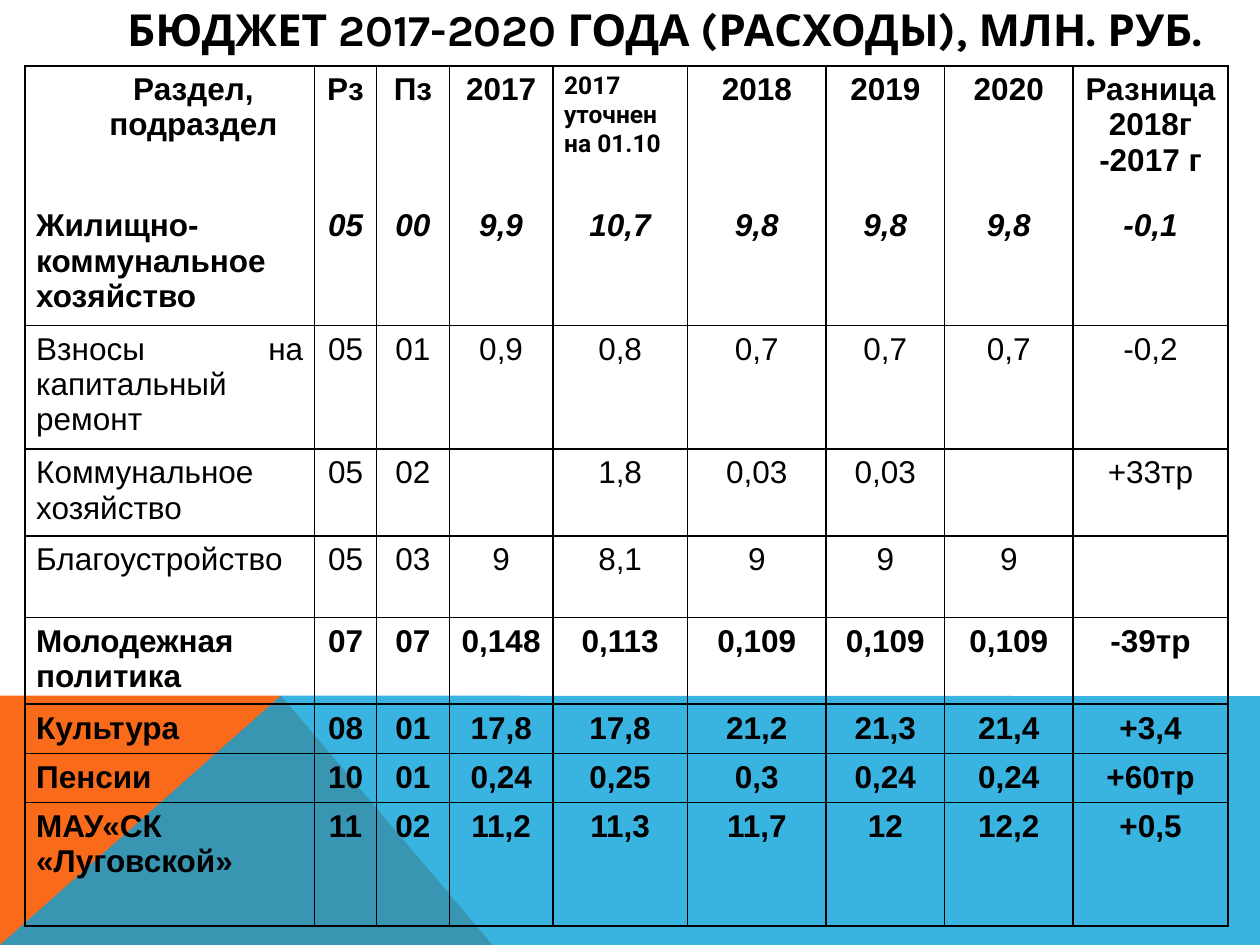
from lxml.etree import SubElement
from pptx import Presentation
from pptx.dml.color import RGBColor
from pptx.enum.text import MSO_ANCHOR as Anchor, PP_ALIGN as Align
from pptx.oxml import parse_xml
from pptx.oxml.ns import nsdecls, qn
from pptx.util import Pt

BLACK = RGBColor(0x00, 0x00, 0x00)
ORANGE = RGBColor(0xF9, 0x6A, 0x1B)
BLUE = RGBColor(0x08, 0xA1, 0xD9)

COLUMN_WIDTHS = [165.6, 35.3, 41.8, 59, 77, 79.2, 67.7, 73.4, 88.6]
ROW_HEIGHTS = [77.8, 70.6, 70.6, 49.7, 46.5, 49.7, 28.1, 28.1, 70.6]
HEADER, HOUSING = 0, 1
SECTION, REVISED = 0, 4
REGULAR_ROWS = (2, 3, 4)

BUDGET = [
    ["Раздел, подраздел", "Рз", "Пз", "2017", "2017\nуточнен\nна 01.10",
     "2018", "2019", "2020", "Разница 2018г\n-2017 г"],
    ["Жилищно-коммунальное хозяйство", "05", "00", "9,9", "10,7", "9,8", "9,8", "9,8", "-0,1"],
    ["Взносы на капитальный ремонт", "05", "01", "0,9", "0,8", "0,7", "0,7", "0,7", "-0,2"],
    ["Коммунальное хозяйство", "05", "02", "", "1,8", "0,03", "0,03", "", "+33тр"],
    ["Благоустройство", "05", "03", "9", "8,1", "9", "9", "9", ""],
    ["Молодежная политика", "07", "07", "0,148", "0,113", "0,109", "0,109", "0,109", "-39тр"],
    ["Культура", "08", "01", "17,8", "17,8", "21,2", "21,3", "21,4", "+3,4"],
    ["Пенсии", "10", "01", "0,24", "0,25", "0,3", "0,24", "0,24", "+60тр"],
    ["МАУ«СК «Луговской»", "11", "02", "11,2", "11,3", "11,7", "12", "12,2", "+0,5"],
]


def write_text(frame, text, font="Arial", size=18, bold=False, italic=False,
               align=Align.CENTER, indent=0):
    frame.word_wrap = True
    for number, line in enumerate(text.split("\n")):
        paragraph = frame.add_paragraph() if number else frame.paragraphs[0]
        paragraph.alignment = align
        paragraph.line_spacing = 1.0
        paragraph.space_before = paragraph.space_after = Pt(0)
        if indent:
            paragraph._p.get_or_add_pPr().set("marL", str(Pt(indent)))
        style = paragraph.font
        if line:
            run = paragraph.add_run()
            run.text = line
            style = run.font
        style.name = font
        style.size = Pt(size)
        style.bold = bold
        style.italic = italic
        style.color.rgb = BLACK


def add_band(slide, corners, color, opacity=100):
    points = [(Pt(x), Pt(y)) for x, y in corners]
    outline = slide.shapes.build_freeform(*points[0], scale=1.0)
    outline.add_line_segments(points[1:], close=True)
    band = outline.convert_to_shape()
    band.shadow.inherit = False
    band.line.fill.background()
    band.fill.solid()
    band.fill.fore_color.rgb = color
    if opacity < 100:
        tint = band._element.spPr.find(qn("a:solidFill"))[0]
        SubElement(tint, qn("a:alpha"), val=str(opacity * 1000))


def add_title(slide):
    title = slide.shapes.title
    title.element.getparent().append(title.element)
    title.left, title.top, title.width, title.height = Pt(65.5), Pt(0), Pt(648), Pt(33)
    title.text_frame.vertical_anchor = Anchor.MIDDLE
    write_text(title.text_frame, "БЮДЖЕТ 2017-2020 ГОДА (РАСХОДЫ), МЛН. РУБ.",
               font="Karla", size=25.2, bold=True, align=Align.LEFT)


def set_borders(cell, hidden=""):
    properties = cell._tc.get_or_add_tcPr()
    for place, side in enumerate("LRTB"):
        paint = ("<a:noFill/>" if side == hidden else
                 f'<a:solidFill><a:srgbClr val="{BLACK}"/></a:solidFill>')
        properties.insert(place, parse_xml(
            f'<a:ln{side} {nsdecls("a")} w="{Pt(1)}">{paint}</a:ln{side}>'))


def cell_format(row, column):
    if (row, column) == (HEADER, SECTION):
        return dict(bold=True, indent=27)
    if (row, column) == (HEADER, REVISED):
        return dict(font="Roboto", size=14, bold=True, align=Align.LEFT)
    return dict(bold=row not in REGULAR_ROWS,
                italic=row == HOUSING and column != SECTION,
                align=Align.JUSTIFY if column == SECTION else Align.CENTER)


def add_budget_table(slide):
    budget = slide.shapes.add_table(
        len(ROW_HEIGHTS), len(COLUMN_WIDTHS), Pt(14.2), Pt(37.6),
        Pt(sum(COLUMN_WIDTHS)), Pt(sum(ROW_HEIGHTS))).table
    budget.first_row = budget.horz_banding = False
    for column, width in zip(budget.columns, COLUMN_WIDTHS):
        column.width = Pt(width)
    for row, height in zip(budget.rows, ROW_HEIGHTS):
        row.height = Pt(height)
    hidden_sides = {HEADER: "B", HOUSING: "T"}
    for row, values in enumerate(BUDGET):
        for column, value in enumerate(values):
            cell = budget.cell(row, column)
            cell.margin_left = cell.margin_right = Pt(6.5)
            cell.margin_top = cell.margin_bottom = Pt(3.6)
            cell.fill.background()
            set_borders(cell, hidden_sides.get(row, ""))
            write_text(cell.text_frame, value, **cell_format(row, column))


def main():
    deck = Presentation()
    deck.slide_width, deck.slide_height = Pt(720), Pt(540)
    slide = deck.slides.add_slide(deck.slide_layouts[5])
    add_band(slide, [(0, 540), (0, 397.5), (160.6, 397.5), (281.5, 540)], ORANGE)
    add_band(slide, [(0, 540), (160.6, 397.5), (720, 397.8), (720, 540)], BLUE, opacity=80)
    add_title(slide)
    add_budget_table(slide)
    deck.save("out.pptx")


if __name__ == "__main__":
    main()
